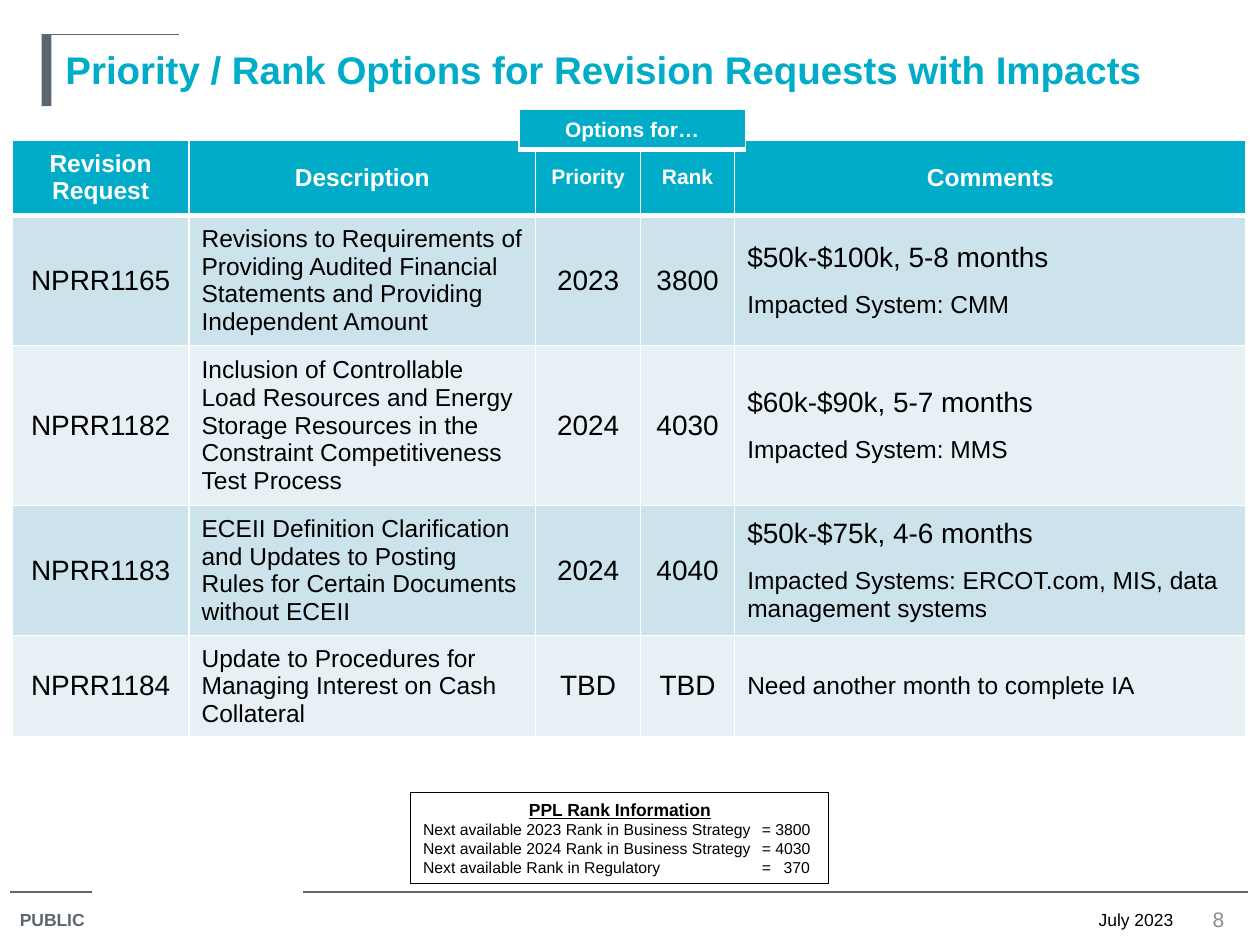
import pptx
import pptx.util
import pptx.dml.color
import pptx.enum.shapes
import pptx.enum.text
import pptx.oxml.ns
import lxml.etree

Cm = pptx.util.Cm
Pt = pptx.util.Pt
qn = pptx.oxml.ns.qn
ALIGN = pptx.enum.text.PP_ALIGN
ANCHOR = pptx.enum.text.MSO_ANCHOR

TEAL, GRAY, BLACK, WHITE = "00ACC8", "5B6770", "000000", "FFFFFF"
BANDS = ["CCE3EB", "E7F1F5"]


def rgb(value):
    return pptx.dml.color.RGBColor.from_string(value)


class Builder:
    font = "Arial"

    def __init__(self, slide):
        self.s = slide

    def para(self, tf, text, size, color=BLACK, align=ALIGN.LEFT, before=0, tabs=(), **fmt):
        p = tf.paragraphs[0]
        if p.runs:
            p = tf.add_paragraph()
        p.alignment = align
        if before:
            p.space_before = Pt(before)
        if tabs:
            tab_list = lxml.etree.SubElement(p._p.get_or_add_pPr(), qn("a:tabLst"))
            for pos, kind in tabs:
                lxml.etree.SubElement(tab_list, qn("a:tab"), pos=str(Cm(pos)), algn=kind)
        r = p.add_run()
        r.text = text
        values = {"name": self.font, "size": Pt(size), "bold": False, **fmt}
        for name, value in values.items():
            setattr(r.font, name, value)
        r.font.color.rgb = rgb(color)

    def text(self, box, text, size, color, anchor=ANCHOR.TOP, **fmt):
        tf = self.s.shapes.add_textbox(*map(Cm, box)).text_frame
        tf.word_wrap = True
        tf.vertical_anchor = anchor
        self.para(tf, text, size, color, **fmt)

    def line(self, x1, x2, y):
        straight = pptx.enum.shapes.MSO_CONNECTOR.STRAIGHT
        sp = self.s.shapes.add_connector(straight, Cm(x1), Cm(y), Cm(x2), Cm(y))
        sp.line.color.rgb = rgb(GRAY)
        sp.line.width = Pt(0.75)
        lxml.etree.SubElement(sp._element.spPr, qn("a:effectLst"))

    def rect(self, box, fill, line=None):
        kind = pptx.enum.shapes.MSO_SHAPE.RECTANGLE
        sp = self.s.shapes.add_shape(kind, *map(Cm, box))
        sp.shadow.inherit = False
        sp.fill.solid()
        sp.fill.fore_color.rgb = rgb(fill)
        if line:
            sp.line.color.rgb = rgb(line)
            sp.line.width = Pt(0.75)
        else:
            sp.line.fill.background()
        sp.text_frame.word_wrap = True
        sp.text_frame.vertical_anchor = ANCHOR.MIDDLE
        return sp.text_frame

    def table(self, left, top, widths, heights):
        frame = self.s.shapes.add_table(
            len(heights), len(widths), Cm(left), Cm(top), Cm(sum(widths)), Cm(sum(heights)))
        tbl = frame.table
        for col, width in zip(tbl.columns, widths):
            col.width = Cm(width)
        for row, height in zip(tbl.rows, heights):
            row.height = Cm(height)
        return tbl

    def cell(self, cell, fill, top=1, bottom=1):
        props = cell._tc.get_or_add_tcPr()
        for side, width in {"L": 1, "R": 1, "T": top, "B": bottom}.items():
            ln = lxml.etree.SubElement(props, qn("a:ln" + side), w=str(Pt(width)))
            solid = lxml.etree.SubElement(ln, qn("a:solidFill"))
            lxml.etree.SubElement(solid, qn("a:srgbClr"), val=WHITE)
        cell.fill.solid()
        cell.fill.fore_color.rgb = rgb(fill)
        cell.vertical_anchor = ANCHOR.MIDDLE
        return cell.text_frame

    def header(self, cell, text, size):
        tf = self.cell(cell, TEAL, bottom=3)
        self.para(tf, text, size, WHITE, ALIGN.CENTER, bold=True)


HEADERS = [("Revision Request", 14), ("Description", 14), ("Priority", 12),
           ("Rank", 12), ("Comments", 14)]
REQUESTS = [
    ("NPRR1165", "Revisions to Requirements of Providing Audited Financial Statements "
     "and Providing Independent Amount", "2023", "3800",
     [("$50k-$100k, 5-8 months", 16), ("Impacted System: CMM", 14)]),
    ("NPRR1182", "Inclusion of Controllable Load Resources and Energy Storage Resources "
     "in the Constraint Competitiveness Test Process", "2024", "4030",
     [("$60k-$90k, 5-7 months", 16), ("Impacted System: MMS", 14)]),
    ("NPRR1183", "ECEII Definition Clarification and Updates to Posting Rules for "
     "Certain Documents without ECEII", "2024", "4040",
     [("$50k-$75k, 4-6 months", 16),
      ("Impacted Systems: ERCOT.com, MIS, data management systems", 14)]),
    ("NPRR1184", "Update to Procedures for Managing Interest on Cash Collateral",
     "TBD", "TBD", [("Need another month to complete IA", 14)]),
]
RANKS = ["Next available 2023 Rank in Business Strategy\t= 3800",
         "Next available 2024 Rank in Business Strategy\t= 4030",
         "Next available Rank in Regulatory\t=\t370"]


def main():
    prs = pptx.Presentation()
    prs.slide_width, prs.slide_height = Cm(25.4), Cm(19.05)
    b = Builder(prs.slides.add_slide(prs.slide_layouts[6]))

    b.line(0.2, 1.85, 17.98)
    b.line(6.1, 25.15, 17.98)
    b.text((0.15, 18.21, 1.96, 0.71), "PUBLIC", 10, GRAY, bold=True)
    b.rect((0.84, 0.69, 0.2, 1.45), GRAY)
    b.line(0.84, 3.61, 0.69)
    b.text((20.52, 18.21, 3.38, 0.61), "July 2023", 10, BLACK, align=ALIGN.RIGHT)
    b.text((1.07, 0.81, 22.86, 1.45),
           "Priority / Rank Options for Revision Requests with Impacts", 22, TEAL, bold=True)
    b.text((23.93, 18.24, 1.27, 0.58), "8", 12, "8C8C8C", ANCHOR.MIDDLE, align=ALIGN.CENTER)

    tbl = b.table(0.25, 2.82, [3.56, 6.99, 2.11, 1.9, 10.31], [1.52] + [1.68] * len(REQUESTS))
    for col, (text, size) in enumerate(HEADERS):
        b.header(tbl.cell(0, col), text, size)
    for row, (number, description, priority, rank, comments) in enumerate(REQUESTS, 1):
        tfs = [b.cell(tbl.cell(row, col), BANDS[(row - 1) % 2], top=3 if row == 1 else 1)
               for col in range(len(HEADERS))]
        for col, text in {0: number, 2: priority, 3: rank}.items():
            b.para(tfs[col], text, 16, align=ALIGN.CENTER)
        b.para(tfs[1], description, 14)
        for i, (text, size) in enumerate(comments):
            b.para(tfs[4], text, size, before=10.3 * i)

    options = b.table(10.46, 2.21, [4.57], [0.81])
    b.header(options.cell(0, 0), "Options for…", 12)

    tf = b.rect((8.28, 15.98, 8.43, 1.83), WHITE, BLACK)
    b.para(tf, "PPL Rank Information", 10, align=ALIGN.CENTER, bold=True, underline=True)
    for text in RANKS:
        b.para(tf, text, 9, tabs=[(6.83, "l"), (7.8, "r")])

    prs.save("out.pptx")


if __name__ == "__main__":
    main()
